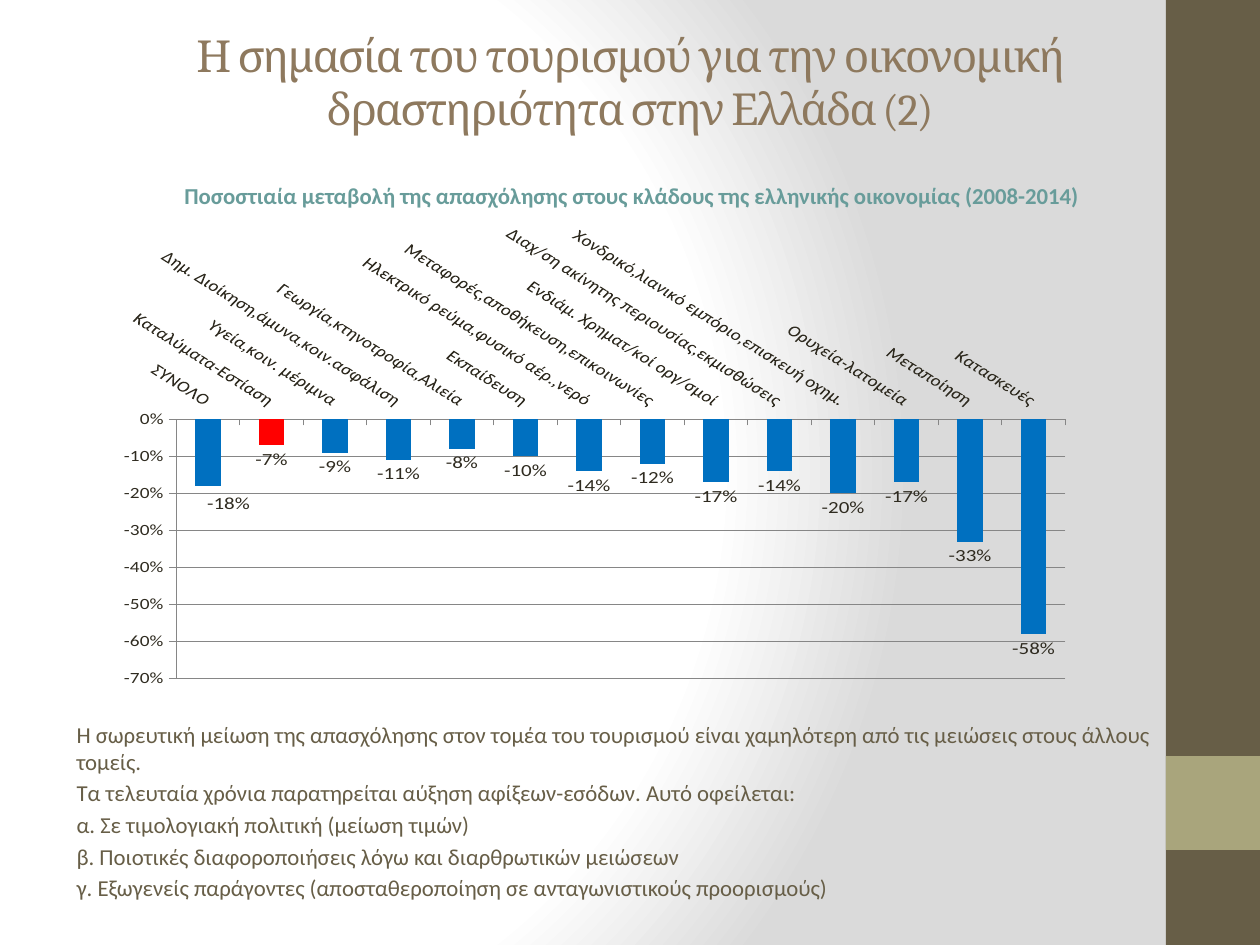
from dataclasses import dataclass

from lxml import etree
from pptx import Presentation
from pptx.chart.data import CategoryChartData
from pptx.dml.color import RGBColor
from pptx.enum.chart import (XL_CHART_TYPE, XL_LABEL_POSITION,
                             XL_TICK_LABEL_POSITION, XL_TICK_MARK)
from pptx.enum.shapes import MSO_SHAPE
from pptx.enum.text import MSO_ANCHOR, MSO_AUTO_SIZE, PP_ALIGN
from pptx.oxml import parse_xml
from pptx.util import Emu, Pt

COLUMNS = XL_CHART_TYPE.COLUMN_CLUSTERED
OUTSIDE_END = XL_LABEL_POSITION.OUTSIDE_END
ABOVE_PLOT = XL_TICK_LABEL_POSITION.HIGH
TICK_OUT = XL_TICK_MARK.OUTSIDE
RECTANGLE = MSO_SHAPE.RECTANGLE
MIDDLE, TOP = MSO_ANCHOR.MIDDLE, MSO_ANCHOR.TOP
NO_AUTOFIT = MSO_AUTO_SIZE.NONE
CENTER, LEFT = PP_ALIGN.CENTER, PP_ALIGN.LEFT

PX = 914400 / 126
A_NS = "http://schemas.openxmlformats.org/drawingml/2006/main"
C_NS = "http://schemas.openxmlformats.org/drawingml/2006/chart"


@dataclass(frozen=True)
class Theme:
    title: RGBColor = RGBColor(0x8E, 0x79, 0x5E)
    heading: RGBColor = RGBColor(0x68, 0x9C, 0x9A)
    text: RGBColor = RGBColor(0x67, 0x5E, 0x47)
    band: RGBColor = RGBColor(0x67, 0x5E, 0x47)
    accent: RGBColor = RGBColor(0xA9, 0xA5, 0x7C)
    chart_text: RGBColor = RGBColor(0x2F, 0x2B, 0x20)
    bar: RGBColor = RGBColor(0x00, 0x70, 0xC0)
    tourism_bar: RGBColor = RGBColor(0xFF, 0x00, 0x00)
    grid: RGBColor = RGBColor(0x86, 0x86, 0x86)
    title_font: str = "Cambria"
    body_font: str = "Calibri"
    title_size: Pt = Pt(25.2)
    body_size: Pt = Pt(13)
    axis_size: Pt = Pt(11)
    label_size: Pt = Pt(12)


theme = Theme()


def box(*lengths):
    return [Emu(round(length * PX)) for length in lengths]


def manual_layout(**values):
    layout = etree.Element(f"{{{C_NS}}}layout")
    manual = etree.SubElement(layout, f"{{{C_NS}}}manualLayout")
    for tag, value in values.items():
        etree.SubElement(manual, f"{{{C_NS}}}{tag}", val=str(value))
    return layout


prs = Presentation()
prs.slide_width, prs.slide_height = box(1260, 945)
slide = prs.slides.add_slide(prs.slide_layouts[1])

# Background: circular gradient from white to grey
background_fill = slide.background.fill
background_fill.gradient()
gradient = slide.background._cSld.find(f".//{{{A_NS}}}gradFill")
gradient.getparent().replace(gradient, parse_xml(
    f'<a:gradFill xmlns:a="{A_NS}" rotWithShape="1"><a:gsLst>'
    '<a:gs pos="0"><a:srgbClr val="FFFFFF"/></a:gs>'
    '<a:gs pos="75000"><a:srgbClr val="FFFFFF"/></a:gs>'
    '<a:gs pos="100000"><a:srgbClr val="DADADA"/></a:gs></a:gsLst>'
    '<a:path path="circle">'
    '<a:fillToRect l="20000" t="50000" r="100000" b="50000"/>'
    '</a:path></a:gradFill>'))

# Side band with its accent square
for top, height, color in ((0, 945, theme.band), (756, 94, theme.accent)):
    band = slide.shapes.add_shape(RECTANGLE, *box(1166, top, 94, height))
    band.shadow.inherit = False
    band.fill.solid()
    band.fill.fore_color.rgb = color
    band.line.fill.background()

# Title
title = slide.shapes.title
title.left, title.top, title.width, title.height = box(63, 38, 1134, 87)
title_frame = title.text_frame
title_frame.auto_size = NO_AUTOFIT
title_frame.vertical_anchor = MIDDLE
title_frame.paragraphs[0].alignment = CENTER
title_run = title_frame.paragraphs[0].add_run()
title_run.text = "Η σημασία του τουρισμού για την οικονομική δραστηριότητα στην Ελλάδα (2)"
title_run.font.name = theme.title_font
title_run.font.size = theme.title_size
title_run.font.color.rgb = theme.title
title_run.font._element.set("spc", "-100")

# Chart heading and conclusions; the wide gap leaves room for the chart
LINE_GAP, CHART_GAP = Pt(2.4), Pt(292.4)
lines = [
    ("Ποσοστιαία μεταβολή της απασχόλησης στους κλάδους της ελληνικής οικονομίας (2008-2014)",
     CENTER, LINE_GAP, theme.heading, True),
    ("Η σωρευτική μείωση της απασχόλησης στον τομέα του τουρισμού είναι χαμηλότερη από τις μειώσεις στους άλλους τομείς.",
     LEFT, CHART_GAP, theme.text, False),
]
lines += [(text, LEFT, LINE_GAP, theme.text, False) for text in (
    "Τα τελευταία χρόνια παρατηρείται αύξηση αφίξεων-εσόδων. Αυτό οφείλεται:",
    "α. Σε τιμολογιακή πολιτική (μείωση τιμών)",
    "β. Ποιοτικές διαφοροποιήσεις λόγω και διαρθρωτικών μειώσεων",
    "γ. Εξωγενείς παράγοντες (αποσταθεροποίηση σε ανταγωνιστικούς προορισμούς)",
)]
body = slide.placeholders[1]
body.left, body.top, body.width, body.height = box(64, 175, 1134, 709)
body_frame = body.text_frame
body_frame.auto_size = NO_AUTOFIT
body_frame.vertical_anchor = TOP
for index, (text, alignment, gap, color, bold) in enumerate(lines):
    paragraph = body_frame.add_paragraph() if index else body_frame.paragraphs[0]
    paragraph.alignment = alignment
    paragraph.space_before = gap
    properties = paragraph._p.get_or_add_pPr()
    properties.set("marL", "0")
    properties.set("indent", "0")
    etree.SubElement(properties, f"{{{A_NS}}}buNone")
    run = paragraph.add_run()
    run.text = text
    run.font.name = theme.body_font
    run.font.size = theme.body_size
    run.font.bold = bold
    run.font.color.rgb = color

# Employment change by sector
sectors = {
    "ΣΥΝΟΛΟ": -0.18,
    "Καταλύματα-Εστίαση": -0.07,
    "Υγεία,κοιν. μέριμνα": -0.09,
    "Δημ. Διοίκηση,άμυνα,κοιν.ασφάλιση": -0.11,
    "Γεωργία,κτηνοτροφία,Αλιεία": -0.08,
    "Εκπαίδευση": -0.10,
    "Hλεκτρικό ρεύμα,φυσικό αέρ.,νερό": -0.14,
    "Μεταφορές,αποθήκευση,επικοινωνίες": -0.12,
    "Ενδιάμ. Χρηματ/κοί οργ/σμοί": -0.17,
    "Διαχ/ση ακίνητης περιουσίας,εκμισθώσεις": -0.14,
    "Χονδρικό,λιανικό εμπόριο,επισκευή οχημ.": -0.20,
    "Ορυχεία-λατομεία": -0.17,
    "Μεταποίηση": -0.33,
    "Κατασκευές": -0.58,
}
employment = CategoryChartData(number_format="0%")
employment.categories = list(sectors)
employment.add_series("Series 1", list(sectors.values()))
chart = slide.shapes.add_chart(COLUMNS, *box(115, 224, 1022, 466), employment).chart
chart.has_title = False
chart.has_legend = False
chart.font.name = theme.body_font
chart.font.size = theme.axis_size
chart.font.color.rgb = theme.chart_text

plot = chart.plots[0]
plot.gap_width = 150
plot.vary_by_categories = False
plot_area = chart._chartSpace.find(f".//{{{C_NS}}}plotArea")
for old_layout in plot_area.findall(f"{{{C_NS}}}layout"):
    plot_area.remove(old_layout)
plot_area.insert(0, manual_layout(layoutTarget="inner", xMode="edge", yMode="edge",
                                  x=0.06, y=0.28, w=0.87, h=0.69))

# Axes, with slanted sector names above the plot
sector_axis, change_axis = chart.category_axis, chart.value_axis
for axis in (sector_axis, change_axis):
    axis.major_tick_mark = TICK_OUT
    axis.format.line.color.rgb = theme.grid
    axis.tick_labels.font.size = theme.axis_size
sector_axis.tick_label_position = ABOVE_PLOT
sector_axis._element.find(f"{{{C_NS}}}txPr/{{{A_NS}}}bodyPr").set("rot", str(38 * 60000))
change_axis.minimum_scale, change_axis.maximum_scale = -0.7, 0
change_axis.major_unit = 0.1
change_axis.has_major_gridlines = True
change_axis.major_gridlines.format.line.color.rgb = theme.grid
change_axis.tick_labels.number_format = "0%"
change_axis.tick_labels.number_format_is_linked = False

# Columns, with tourism picked out
series = plot.series[0]
series.invert_if_negative = False
series.format.fill.solid()
series.format.fill.fore_color.rgb = theme.bar
tourism_fill = series.points[1].format.fill
tourism_fill.solid()
tourism_fill.fore_color.rgb = theme.tourism_bar

# Value labels; the first one sits slightly to the right
labels = series.data_labels
labels.show_value = True
labels.number_format = "0%"
labels.number_format_is_linked = False
labels.position = OUTSIDE_END
labels.font.size = theme.label_size
total_label = series.points[0].data_label
total_label.font.size = theme.label_size
total_label.position = OUTSIDE_END
label_index = series._element.find(f".//{{{C_NS}}}dLbl/{{{C_NS}}}idx")
label_index.addnext(manual_layout(x=0.02, y=0.01))

prs.save("out.pptx")
